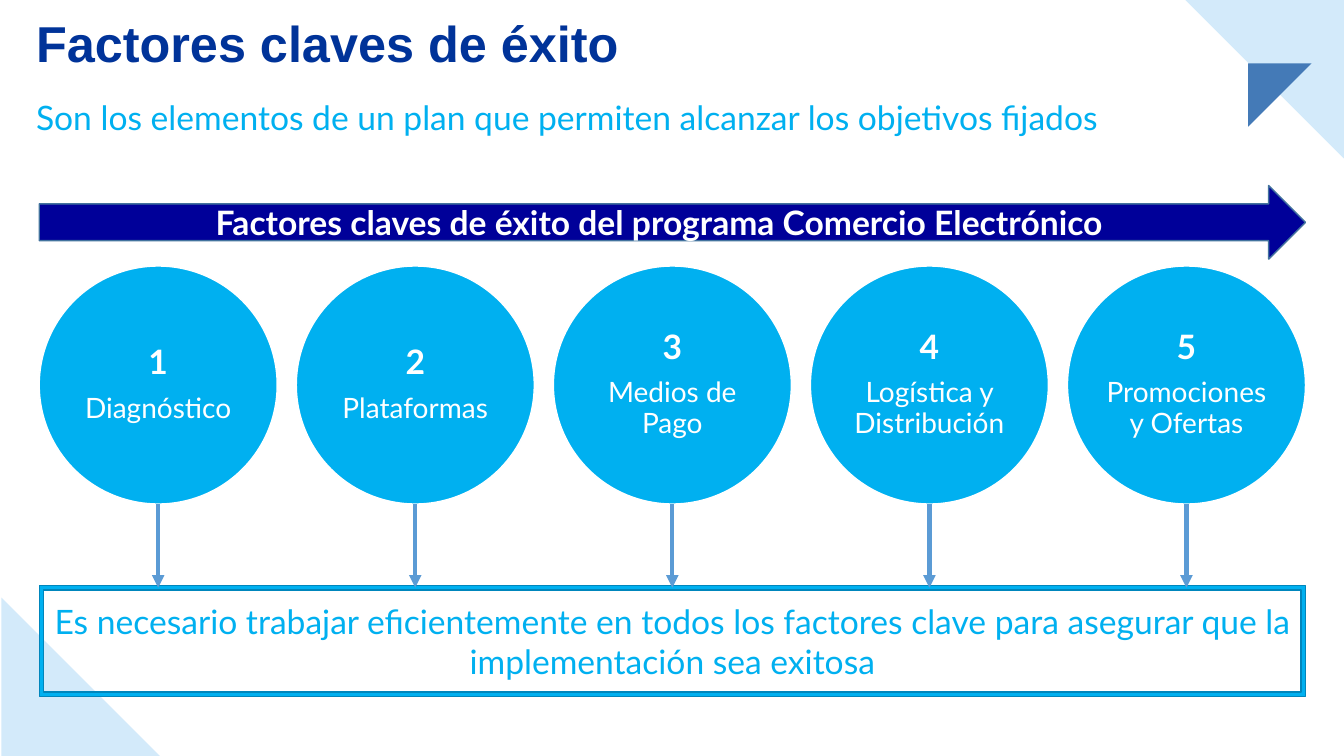
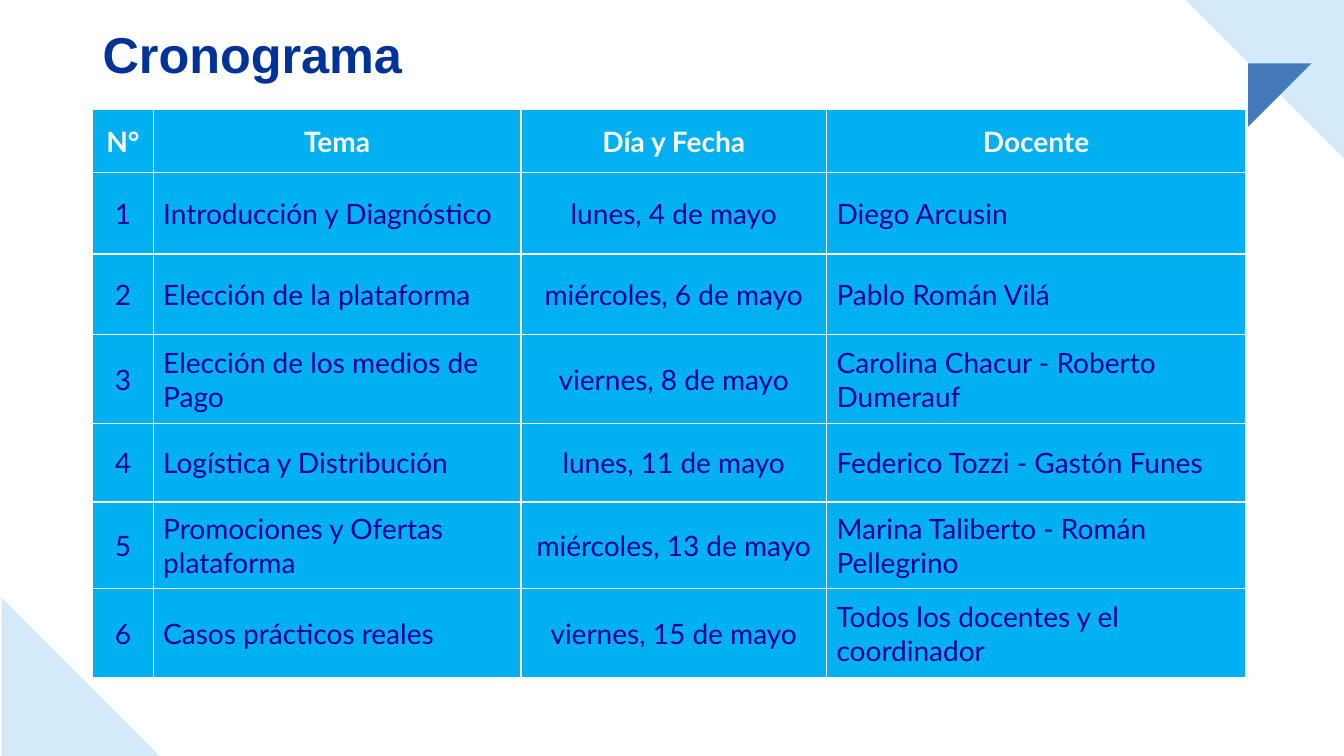
from lxml.etree import SubElement
from pptx import Presentation
from pptx.dml.color import RGBColor
from pptx.enum.shapes import MSO_CONNECTOR, MSO_SHAPE
from pptx.enum.text import MSO_ANCHOR as Anchor, PP_ALIGN as Align
from pptx.oxml.ns import qn
from pptx.util import Pt

COLORS = {
    "title": "003399",
    "navy": "000099",
    "cyan": "00B0F0",
    "frame_line": "0086BC",
    "banner_line": "43739E",
    "arrow": "5B9BD5",
    "pale": "D3EAFA",
    "accent": "447AB7",
    "white": "FFFFFF",
}
TITLE_FONT, BODY_FONT = "Arial", "Lato"
WIDTH, HEIGHT = 960, 540
CORNER = 113.2

FACTORS = ["Diagnóstico", "Plataformas", "Medios de Pago",
           "Logística y Distribución", "Promociones y Ofertas"]

SCHEDULE = [
    ("N°", "Tema", "Día y Fecha", "Docente"),
    ("1", "Introducción y Diagnóstico", "lunes, 4 de mayo", "Diego Arcusin"),
    ("2", "Elección de la plataforma", "miércoles, 6 de mayo", "Pablo Román Vilá"),
    ("3", "Elección de los medios de Pago", "viernes, 8 de mayo",
     "Carolina Chacur - Roberto Dumerauf"),
    ("4", "Logística y Distribución", "lunes, 11 de mayo",
     "Federico Tozzi - Gastón Funes"),
    ("5", "Promociones y Ofertas plataforma", "miércoles, 13 de mayo",
     "Marina Taliberto - Román Pellegrino"),
    ("6", "Casos prácticos reales", "viernes, 15 de mayo",
     "Todos los docentes y el coordinador"),
]
COLUMN_WIDTHS = [43.2, 262.8, 218.2, 299.5]
ROW_HEIGHTS = [44.6, 58.3, 57.6, 63.4, 56.2, 61.9, 63.4]
LEFT_COLUMNS = (1, 3)


def rgb(name):
    return RGBColor.from_string(COLORS[name])


def points(*lengths):
    return [Pt(length) for length in lengths]


def paint(shape, fill, line=None):
    shape.shadow.inherit = False
    shape.fill.solid()
    shape.fill.fore_color.rgb = rgb(fill)
    if line:
        shape.line.color.rgb = rgb(line)
        shape.line.width = Pt(1)
    else:
        shape.line.fill.background()


def write(paragraph, text, size, color, bold=False, align=Align.LEFT, font=BODY_FONT):
    paragraph.alignment = align
    run = paragraph.add_run()
    run.text = text
    run.font.name = font
    run.font.size = Pt(size)
    run.font.bold = bold
    run.font.color.rgb = rgb(color)


def add_text_box(slide, box, anchor=Anchor.TOP):
    """Add a wrapping text box and return its first paragraph."""
    frame = slide.shapes.add_textbox(*points(*box)).text_frame
    frame.word_wrap = True
    frame.vertical_anchor = anchor
    return frame.paragraphs[0]


def add_preset(slide, kind, box, fill, line):
    """Add a painted preset shape whose text is centred vertically."""
    shape = slide.shapes.add_shape(kind, *points(*box))
    paint(shape, fill, line)
    shape.text_frame.word_wrap = True
    shape.text_frame.vertical_anchor = Anchor.MIDDLE
    return shape


def add_title(slide, text, box):
    paragraph = add_text_box(slide, box, Anchor.BOTTOM)
    paragraph.line_spacing = 0.9
    write(paragraph, text, 36, "title", True, font=TITLE_FONT)


def decorate_layout(layout, slide):
    """Draw the corner triangles and move them to the layout all slides use."""
    left, middle, size = WIDTH - CORNER, WIDTH - 68.4, 45.2
    top = HEIGHT - CORNER
    triangles = [
        ("pale", [(left, 0), (WIDTH, 0), (WIDTH, CORNER)]),
        ("accent", [(middle, size), (middle + size, size), (middle, 2 * size)]),
        ("pale", [(1, top), (1 + CORNER, HEIGHT), (1, HEIGHT)]),
    ]
    for color, corners in triangles:
        start, *others = [points(*corner) for corner in corners]
        builder = slide.shapes.build_freeform(*start)
        builder.add_line_segments(others, close=True)
        triangle = builder.convert_to_shape()
        paint(triangle, color)
        layout.shapes.element.append(triangle.element)


def add_down_arrow(slide, x, top, bottom):
    arrow = slide.shapes.add_connector(MSO_CONNECTOR.STRAIGHT, *points(x, top, x, bottom))
    arrow.line.color.rgb = rgb("arrow")
    arrow.line.width = Pt(3)
    line = arrow.element.spPr.find(qn("a:ln"))
    SubElement(line, qn("a:tailEnd"), type="triangle")
    SubElement(arrow.element.spPr, qn("a:effectLst"))


def add_factor(slide, number, name, box):
    circle = add_preset(slide, MSO_SHAPE.OVAL, box, "cyan", "white")
    frame = circle.text_frame
    frame.margin_left = frame.margin_right = Pt(2.2)
    frame.margin_top = frame.margin_bottom = Pt(2.2)
    heading, label = frame.paragraphs[0], frame.add_paragraph()
    heading.line_spacing = label.line_spacing = 0.9
    heading.space_after = Pt(8.4)
    write(heading, str(number), 24, "white", True, Align.CENTER)
    write(label, name, 20, "white", align=Align.CENTER)


def add_factor_row(slide, box, arrow_length):
    """Spread the circles evenly over the box, each with an arrow below it."""
    left, top, width, diameter = box
    pitch = (width - diameter) / (len(FACTORS) - 1)
    bottom = top + diameter
    for index, name in enumerate(FACTORS):
        x = left + index * pitch
        add_factor(slide, index + 1, name, (x, top, diameter, diameter))
        add_down_arrow(slide, x + diameter / 2, bottom, bottom + arrow_length)


def add_conclusion(slide, box):
    frame = add_preset(slide, MSO_SHAPE.FRAME, box, "cyan", "frame_line")
    frame.adjustments[0] = 0.04
    write(frame.text_frame.paragraphs[0],
          "Es necesario trabajar eficientemente en todos los factores clave "
          "para asegurar que la implementación sea exitosa",
          24, "cyan", align=Align.CENTER)


def add_banner(slide, box):
    banner = add_preset(slide, MSO_SHAPE.RIGHT_ARROW, box, "navy", "banner_line")
    write(banner.text_frame.paragraphs[0],
          "Factores claves de éxito del programa Comercio Electrónico ",
          24, "white", True, Align.CENTER)


def set_borders(cell, color):
    properties = cell._tc.get_or_add_tcPr()
    for position, side in enumerate(("lnL", "lnR", "lnT", "lnB")):
        line = SubElement(properties, qn(f"a:{side}"), w=str(Pt(1)))
        fill = SubElement(line, qn("a:solidFill"))
        SubElement(fill, qn("a:srgbClr"), val=COLORS[color])
        properties.insert(position, line)


def fill_cell(cell, text, is_header, is_left):
    cell.fill.solid()
    cell.fill.fore_color.rgb = rgb("cyan")
    set_borders(cell, "white")
    cell.vertical_anchor = Anchor.MIDDLE
    cell.margin_left = Pt(7.2 if is_left else 0.7)
    cell.margin_right = cell.margin_top = Pt(0.7)
    cell.margin_bottom = 0
    write(cell.text_frame.paragraphs[0], text, 20,
          "white" if is_header else "navy", is_header,
          Align.LEFT if is_left else Align.CENTER)


def add_schedule(slide, left, top):
    table = slide.shapes.add_table(
        len(SCHEDULE), len(COLUMN_WIDTHS),
        *points(left, top, sum(COLUMN_WIDTHS), sum(ROW_HEIGHTS))).table
    table.first_row = table.horz_banding = False
    for column, width in zip(table.columns, COLUMN_WIDTHS):
        column.width = Pt(width)
    for row_index, (row, height) in enumerate(zip(table.rows, ROW_HEIGHTS)):
        row.height = Pt(height)
        is_header = row_index == 0
        for index, text in enumerate(SCHEDULE[row_index]):
            is_left = index in LEFT_COLUMNS and not is_header
            fill_cell(row.cells[index], text, is_header, is_left)


def build_factors_slide(slide):
    left, width = 28, 906 - 1.5
    add_title(slide, "Factores claves de éxito", (18.7, 9.4, 831, 46.8))
    write(add_text_box(slide, (18.7, 65.5, 798, 36)),
          "Son los elementos de un plan que permiten alcanzar los objetivos fijados",
          24, "cyan")
    add_conclusion(slide, (left, 418.3, width, 79.2))
    add_factor_row(slide, (left, 190, width, 170), 59.8)
    add_banner(slide, (left, 132.5, width, 52.6))


def build_schedule_slide(slide):
    left = 66.2
    add_title(slide, "Cronograma", (left, 17.3, 260, 46.8))
    add_schedule(slide, left, 78.5)


def main():
    presentation = Presentation()
    presentation.slide_width, presentation.slide_height = points(WIDTH, HEIGHT)
    blank = presentation.slide_layouts[6]
    factors_slide = presentation.slides.add_slide(blank)
    decorate_layout(blank, factors_slide)
    build_factors_slide(factors_slide)
    build_schedule_slide(presentation.slides.add_slide(blank))
    presentation.save("out.pptx")


if __name__ == "__main__":
    main()
